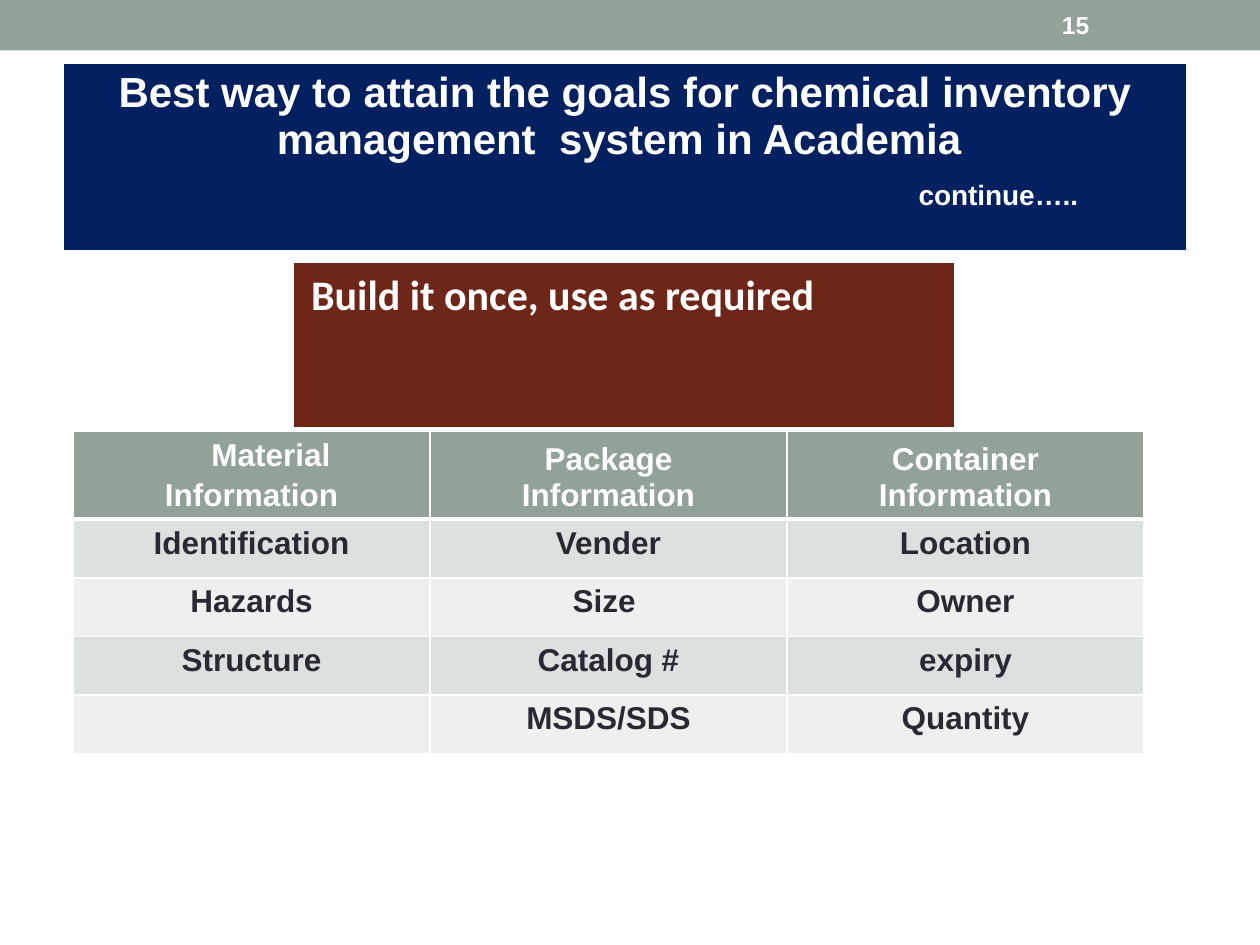
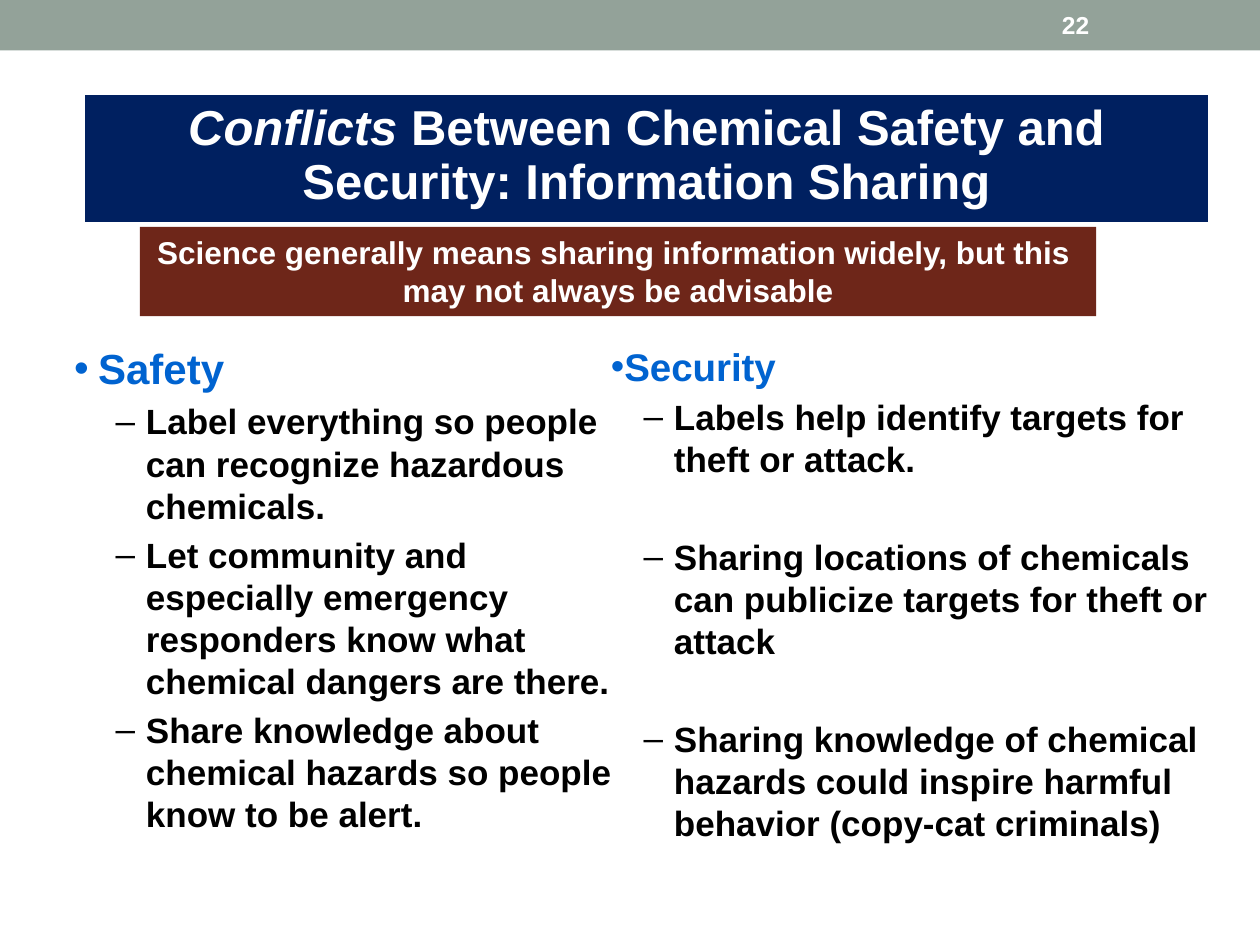
from pptx import Presentation
from pptx.dml.color import RGBColor
from pptx.enum.shapes import MSO_SHAPE
from pptx.enum.text import MSO_ANCHOR, PP_ALIGN
from pptx.oxml import parse_xml
from pptx.oxml.ns import nsdecls
from pptx.util import Inches, Pt

COLUMNS, ROWS = 100, 75
BLANK = 6
NAVY, MAROON, SAGE = "002060", "6E2619", "93A299"
WHITE, BLACK, INK, BLUE = "FFFFFF", "000000", "292934", "0063D0"
STRIPES = ("DCE0DE", "EEF0EF")


def color(hex_string):
    return RGBColor.from_string(hex_string)


def paint(target, hex_string):
    target.fill.solid()
    target.fill.fore_color.rgb = color(hex_string)


def set_bullet(paragraph, character, margin, indent):
    properties = paragraph._p.get_or_add_pPr()
    properties.set("marL", str(Inches(margin)))
    properties.set("indent", str(Inches(indent)))
    properties.append(parse_xml(f'<a:buFont {nsdecls("a")} typeface="Arial"/>'))
    properties.append(parse_xml(f'<a:buChar {nsdecls("a")} char="{character}"/>'))


def set_borders(cell, top, bottom):
    """Draw white cell borders; top and bottom are widths in points."""
    properties = cell._tc.get_or_add_tcPr()
    sides = {"lnL": 1, "lnR": 1, "lnT": top, "lnB": bottom}
    for position, (side, width) in enumerate(sides.items()):
        properties.insert(position, parse_xml(
            f'<a:{side} {nsdecls("a")} w="{Pt(width)}"><a:solidFill>'
            f'<a:srgbClr val="{WHITE}"/></a:solidFill></a:{side}>'))


class Deck:
    """Holds the presentation, its style and the slide being built."""

    def __init__(self):
        self.presentation = Presentation()
        self.presentation.slide_width = Inches(10)
        self.presentation.slide_height = Inches(7.5)
        self.column = self.presentation.slide_width / COLUMNS
        self.row = self.presentation.slide_height / ROWS
        self.slide = None

    def place(self, left, top, width, height):
        """Turn grid columns and rows into slide lengths."""
        return (round(left * self.column), round(top * self.row),
                round(width * self.column), round(height * self.row))

    def style(self, paragraph, size, hex_string=WHITE, align=PP_ALIGN.LEFT,
              font="Arial", before=0):
        paragraph.alignment = align
        paragraph.space_before = Pt(before)
        for run in paragraph.runs:
            run.font.name = font
            run.font.size = Pt(size)
            run.font.bold = True
            run.font.color.rgb = color(hex_string)

    def new_slide(self, number):
        layout = self.presentation.slide_layouts[BLANK]
        self.slide = self.presentation.slides.add_slide(layout)
        self.rectangle((0, 0, 100, 4), SAGE)
        frame = self.label((83.3, 0.2, 11.7, 3.6), str(number), 14)
        frame.vertical_anchor = MSO_ANCHOR.MIDDLE

    def rectangle(self, area, fill):
        shape = self.slide.shapes.add_shape(MSO_SHAPE.RECTANGLE, *self.place(*area))
        shape.shadow.inherit = False
        paint(shape, fill)
        shape.line.fill.background()
        return shape

    def text_box(self, area):
        frame = self.slide.shapes.add_textbox(*self.place(*area)).text_frame
        frame.word_wrap = True
        return frame

    def label(self, area, text, size):
        frame = self.text_box(area)
        frame.text = text
        self.style(frame.paragraphs[0], size)
        return frame

    def banner(self, area, text, size):
        frame = self.rectangle(area, MAROON).text_frame
        frame.word_wrap = True
        frame.vertical_anchor = MSO_ANCHOR.TOP
        frame.text = text
        for paragraph in frame.paragraphs:
            self.style(paragraph, size, align=PP_ALIGN.CENTER)

    def add_table(self, area, row_count, column_count):
        return self.slide.shapes.add_table(
            row_count, column_count, *self.place(*area)).table

    def heading_cell(self, area, fill, text, size, **options):
        """Add a one-cell table and return its cell."""
        cell = self.add_table(area, 1, 1).cell(0, 0)
        cell.text = text
        paint(cell, fill)
        set_borders(cell, 1, 3)
        self.style(cell.text_frame.paragraphs[0], size, **options)
        return cell

    def title(self, area, text, size):
        return self.heading_cell(area, NAVY, text, size, align=PP_ALIGN.CENTER)

    def table(self, area, rows, header_height):
        table = self.add_table(area, len(rows), len(rows[0]))
        body_height = (area[3] - header_height) / (len(rows) - 1)
        for number, values in enumerate(rows):
            is_header = number == 0
            table.rows[number].height = round(
                self.row * (header_height if is_header else body_height))
            for cell, value in zip(table.rows[number].cells, values):
                cell.text = value
                paint(cell, SAGE if is_header else STRIPES[(number - 1) % 2])
                set_borders(cell, 3 if number == 1 else 1, 3 if is_header else 1)
                if is_header:
                    cell.vertical_anchor = MSO_ANCHOR.BOTTOM
                for paragraph in cell.text_frame.paragraphs:
                    self.style(paragraph, 18, WHITE if is_header else INK,
                               PP_ALIGN.CENTER)

    def bullet_list(self, area, heading, size, heading_indent, points, margin, gap):
        """Write a blue heading and dashed points, gap points of space apart."""
        frame = self.text_box(area)
        frame.text = "\n".join([heading, *points])
        first, *others = frame.paragraphs
        self.style(first, size, BLUE)
        set_bullet(first, "•", *heading_indent)
        for number, paragraph in enumerate(others):
            paragraph.level = 1
            self.style(paragraph, 20, BLACK, before=gap if number else 4)
            set_bullet(paragraph, "–", margin, -0.24)


def build_inventory_slide(deck):
    deck.new_slide(15)
    title = deck.title(
        (5, 5, 89.2, 15),
        "Best way to attain the goals for chemical inventory management  system in Academia ", 24)
    continuation = title.text_frame.add_paragraph()
    continuation.text = "continue….."
    deck.style(continuation, 16, before=10)
    continuation._p.get_or_add_pPr().set("marL", str(Inches(6.69)))

    motto = deck.heading_cell((23.3, 20.8, 52.5, 13.3), MAROON,
                              "Build it once, use as required", 24, font="Calibri")
    motto.margin_left, motto.margin_top = Inches(0.14), Inches(0.07)

    deck.table((5.8, 34.2, 85, 25.1), [
        ("Information", "Package\nInformation", "Container\nInformation"),
        ("Identification", "Vender", "Location"),
        ("Hazards", "Size ", "Owner"),
        ("Structure", "Catalog #", "expiry"),
        ("", "MSDS/SDS", "Quantity"),
    ], header_height=6.5)
    deck.label((15.8, 34, 13, 4), "Material", 18)


def build_conflicts_slide(deck):
    deck.new_slide(22)
    title = deck.title((6.7, 7.5, 89.2, 9.5), "Conflicts", 28)
    paragraph = title.text_frame.paragraphs[0]
    paragraph.runs[0].font.italic = True
    paragraph.add_run().text = " Between Chemical Safety and Security: Information Sharing"
    deck.style(paragraph, 28, align=PP_ALIGN.CENTER)

    deck.banner((11.1, 18, 75.9, 7.1),
                "Science generally means sharing information widely, but this \n"
                "may not always be advisable", 18)
    deck.bullet_list((3.1, 26.7, 47.2, 43.3), "Safety", 24, (0.37, -0.19), [
        "Label everything so people can recognize hazardous chemicals.",
        "Let community and especially emergency responders know what "
        "chemical dangers are there.",
        "Share knowledge about chemical hazards so people know to be alert.",
    ], margin=0.75, gap=4)
    deck.bullet_list((47.5, 26.7, 51.5, 45.8), "Security", 22, (0, 0), [
        "Labels help identify targets for theft or attack.",
        "Sharing locations of chemicals can publicize targets for theft or attack",
        "Sharing knowledge of chemical hazards could inspire harmful behavior "
        "(copy-cat criminals)",
    ], margin=0.5, gap=32)


def main():
    deck = Deck()
    build_inventory_slide(deck)
    build_conflicts_slide(deck)
    deck.presentation.save("out.pptx")


if __name__ == "__main__":
    main()
